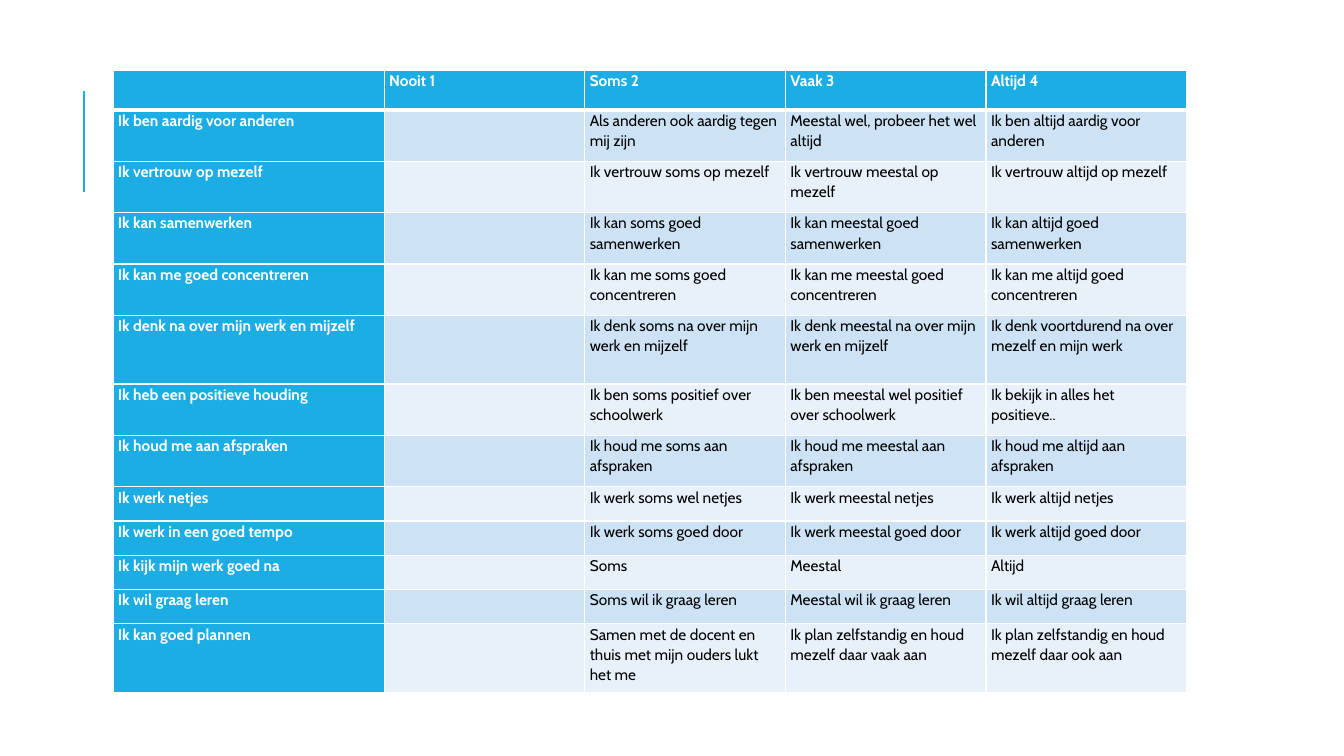
import dataclasses

import pptx
import pptx.dml.color
import pptx.enum.shapes
import pptx.oxml
import pptx.oxml.ns
import pptx.util
from pptx.util import Inches

BLUE = "1CADE4"
WHITE = "FFFFFF"
BLACK = "000000"
BANDS = ("CDE3F5", "E8F1FA")
HEIGHT_UNIT = 0.17
HEADER_HEIGHT = 0.39
COLUMN_WIDTHS = (2.69, 1.99, 1.99, 1.99, 1.99)
HEADINGS = ("", "Nooit 1", "Soms 2", "Vaak 3", "Altijd 4")


@dataclasses.dataclass(frozen=True)
class Skill:
    statement: str
    sometimes: str
    often: str
    always: str
    units: int = 3


SKILLS = (
    Skill("Ik ben aardig voor anderen", "Als anderen ook aardig tegen mij zijn",
          "Meestal wel, probeer het wel altijd", "Ik ben altijd aardig voor anderen"),
    Skill("Ik vertrouw op mezelf", "Ik vertrouw soms op mezelf",
          "Ik vertrouw meestal op mezelf", "Ik vertrouw altijd op mezelf"),
    Skill("Ik kan samenwerken", "Ik kan soms goed samenwerken",
          "Ik kan meestal goed samenwerken", "Ik kan altijd goed samenwerken"),
    Skill("Ik kan me goed concentreren", "Ik kan me soms goed concentreren",
          "Ik kan me meestal goed concentreren", "Ik kan me altijd goed concentreren"),
    Skill("Ik denk na over mijn werk en mijzelf", "Ik denk soms na over mijn werk en mijzelf",
          "Ik denk meestal na over mijn werk en mijzelf",
          "Ik denk voortdurend na over mezelf en mijn werk", units=4),
    Skill("Ik heb een positieve houding", "Ik ben soms positief over schoolwerk",
          "Ik ben meestal wel positief over schoolwerk", "Ik bekijk in alles het positieve.."),
    Skill("Ik houd me aan afspraken", "Ik houd me soms aan afspraken",
          "Ik houd me meestal aan afspraken", "Ik houd me altijd aan afspraken"),
    Skill("Ik werk netjes", "Ik werk soms wel netjes",
          "Ik werk meestal netjes", "Ik werk altijd netjes", units=2),
    Skill("Ik werk in een goed tempo", "Ik werk soms goed door",
          "Ik werk meestal goed door", "Ik werk altijd goed door", units=2),
    Skill("Ik kijk mijn werk goed na", "Soms", "Meestal", "Altijd", units=2),
    Skill("Ik wil graag leren", "Soms wil ik graag leren",
          "Meestal wil ik graag leren", "Ik wil altijd graag leren", units=2),
    Skill("Ik kan goed plannen", "Samen met de docent en thuis met mijn ouders lukt het me",
          "Ik plan zelfstandig en houd mezelf daar vaak aan",
          "Ik plan zelfstandig en houd mezelf daar ook aan", units=4),
)


def rgb(value: str) -> pptx.dml.color.RGBColor:
    return pptx.dml.color.RGBColor.from_string(value)


def write(frame, text: str, *, color: str = BLACK, bold: bool = False,
          size: float = 11, font: str = "Cabin") -> None:
    paragraph = frame.paragraphs[0]
    paragraph.line_spacing = 1.07
    run = paragraph.add_run()
    run.text = text
    run.font.name = font
    run.font.size = pptx.util.Pt(size)
    run.font.bold = bold
    run.font.color.rgb = rgb(color)


def add_borders(cell, *, bottom: float) -> None:
    properties = cell._tc.get_or_add_tcPr()
    for side, points in (("L", 1), ("R", 1), ("T", 1), ("B", bottom)):
        properties.append(pptx.oxml.parse_xml(
            f'<a:ln{side} {pptx.oxml.ns.nsdecls("a")} w="{pptx.util.Pt(points)}">'
            f'<a:solidFill><a:srgbClr val="{WHITE}"/></a:solidFill></a:ln{side}>'))


def draw_cell(cell, text: str, *, fill: str, heading: bool, bottom: float = 1) -> None:
    cell.margin_left = cell.margin_right = Inches(0.05)
    cell.margin_top = cell.margin_bottom = Inches(0)
    add_borders(cell, bottom=bottom)
    cell.fill.solid()
    cell.fill.fore_color.rgb = rgb(fill)
    if text:
        write(cell.text_frame, text, color=WHITE if heading else BLACK, bold=heading)


def draw_rubric(slide) -> None:
    heights = [HEADER_HEIGHT] + [skill.units * HEIGHT_UNIT for skill in SKILLS]
    rubric = slide.shapes.add_table(
        len(heights), len(COLUMN_WIDTHS), Inches(1.12), Inches(0.7),
        Inches(sum(COLUMN_WIDTHS)), Inches(sum(heights))).table
    for column, width in zip(rubric.columns, COLUMN_WIDTHS):
        column.width = Inches(width)
    for row, height in zip(rubric.rows, heights):
        row.height = Inches(height)
    for column, heading in enumerate(HEADINGS):
        draw_cell(rubric.cell(0, column), heading, fill=BLUE, heading=True, bottom=3)
    for row, skill in enumerate(SKILLS, start=1):
        answers = (skill.statement, "", skill.sometimes, skill.often, skill.always)
        for column, answer in enumerate(answers):
            is_statement = column == 0
            fill = BLUE if is_statement else BANDS[(row - 1) % 2]
            draw_cell(rubric.cell(row, column), answer, fill=fill, heading=is_statement)


def draw_accent(slide) -> None:
    accent = slide.shapes.add_connector(
        pptx.enum.shapes.MSO_CONNECTOR.STRAIGHT,
        Inches(0.83), Inches(1.9), Inches(0.83), Inches(0.9))
    accent.line.color.rgb = rgb(BLUE)
    accent.line.width = pptx.util.Pt(1.5)
    accent._element.spPr.append(
        pptx.oxml.parse_xml(f'<a:effectLst {pptx.oxml.ns.nsdecls("a")}/>'))


def main() -> None:
    presentation = pptx.Presentation()
    presentation.slide_width = Inches(13.33)
    presentation.slide_height = Inches(7.5)
    slide = presentation.slides.add_slide(presentation.slide_layouts[6])
    draw_accent(slide)
    draw_rubric(slide)
    presentation.save("out.pptx")


if __name__ == "__main__":
    main()
